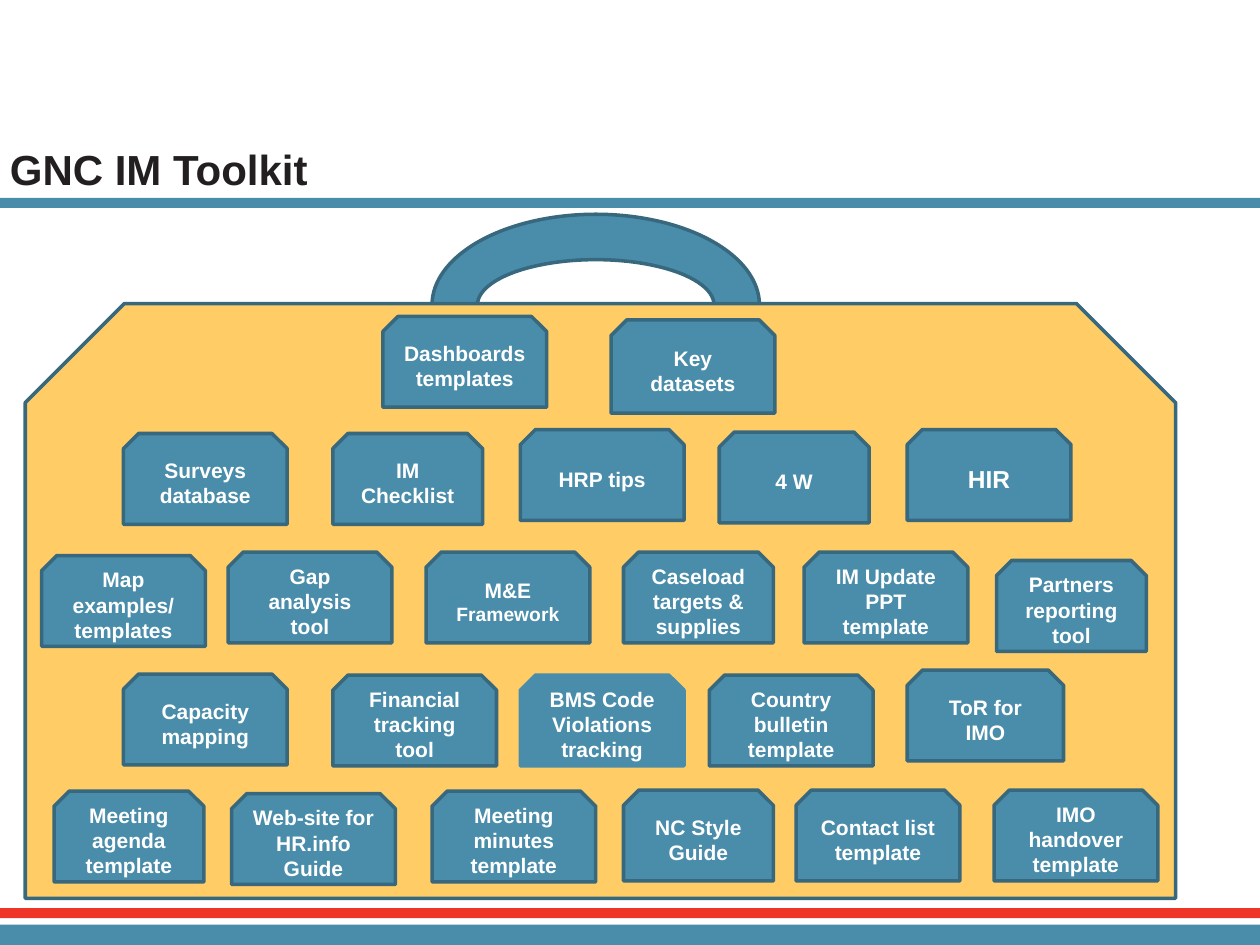
from pptx import Presentation, util as u
from pptx.dml.color import RGBColor
from pptx.enum import shapes, text

THEME = {
    "font": "Arial",
    "blue": "4A8DAA", "edge": "37687E", "red": "EE3528",
    "case": "FFCC66", "ink": "231F20", "white": "FFFFFF",
    "title": 24, "large": 14, "body": 12, "small": 11, "line": 2,
}
SLIDE_WIDTH, SLIDE_HEIGHT = 25.4, 19.05
WIDE, MEDIUM, NARROW = 3.3, 3.15, 3.02
TOOL_HEIGHT = 1.83

TITLE = "GNC IM Toolkit"
BARS = [(3.99, 0.2, "blue"), (18.64, 0.41, "blue"), (18.31, 0.2, "red")]  # top, height, fill
HANDLE = (8.71, 4.32, 6.6, 3.66)
CASE = (0.51, 6.12, 23.19, 11.99)

# Each row of the case: label, left, top, width
ROWS = [
    [("Dashboards templates", 7.72, 6.38, WIDE),
     ("Key datasets", 12.32, 6.45, WIDE)],
    [("Surveys database", 2.49, 8.74, WIDE),
     ("IM Checklist", 6.71, 8.74, NARROW),
     ("HRP tips", 10.49, 8.66, WIDE),
     ("4 W", 14.5, 8.71, NARROW),
     ("HIR", 18.29, 8.66, WIDE)],
    [("Map examples/ templates", 0.84, 11.2, WIDE),
     ("Gap analysis tool", 4.6, 11.13, WIDE),
     ("M&E Framework", 8.59, 11.13, WIDE),
     ("Caseload targets & supplies", 12.57, 11.13, NARROW),
     ("IM Update PPT template", 16.21, 11.13, WIDE),
     ("Partners reporting tool", 20.09, 11.3, NARROW)],
    [("Capacity mapping", 2.49, 13.59, WIDE),
     ("Financial tracking tool", 6.71, 13.61, WIDE),
     ("BMS Code Violations tracking", 10.49, 13.61, WIDE),
     ("Country bulletin template", 14.3, 13.61, WIDE),
     ("ToR for IMO", 18.29, 13.51, MEDIUM)],
    [("Meeting agenda template", 1.09, 15.95, NARROW),
     ("Web-site for HR.info Guide", 4.67, 16.0, WIDE),
     ("Meeting minutes template", 8.71, 15.95, WIDE),
     ("NC Style Guide", 12.57, 15.93, NARROW),
     ("Contact list template", 16.05, 15.93, WIDE),
     ("IMO handover template", 20.04, 15.93, WIDE)],
]
# Departures from the common tool format
HEIGHTS = {"Key datasets": 1.88}
EDGES = {"BMS Code Violations tracking": "blue"}
SPANS = {
    "HIR": [("HIR", "large")],
    "M&E Framework": [("M&E ", "body"), ("Framework", "small")],
}


def color(name):
    return RGBColor.from_string(THEME[name])


def set_all(target, values):
    for name, value in values.items():
        setattr(target, name, value)


def add_shape(page, kind, place, fill, edge=None):
    shape = page.shapes.add_shape(kind, *map(u.Cm, place))
    shape.shadow.inherit = False
    shape.fill.solid()
    shape.fill.fore_color.rgb = color(fill)
    if edge:
        shape.line.color.rgb = color(edge)
        shape.line.width = u.Pt(THEME["line"])
    else:
        shape.line.fill.background()
    return shape


def write(box, spans, ink, align, frame_format):
    """Fill the first paragraph with (text, size name) spans."""
    set_all(box.text_frame, {"word_wrap": True, **frame_format})
    para = box.text_frame.paragraphs[0]
    para.alignment = align
    for words, size in spans:
        span = para.add_run()
        span.text = words
        set_all(span.font, {"name": THEME["font"], "size": u.Pt(THEME[size]), "bold": True})
        span.font.color.rgb = color(ink)


def add_tool(page, label, left, top, width):
    place = (left, top, width, HEIGHTS.get(label, TOOL_HEIGHT))
    tool = add_shape(page, shapes.MSO_SHAPE.SNIP_2_SAME_RECTANGLE, place,
                     "blue", EDGES.get(label, "edge"))
    write(tool, SPANS.get(label, [(label, "body")]), "white", text.PP_ALIGN.CENTER,
          {"vertical_anchor": text.MSO_ANCHOR.MIDDLE})


def main():
    deck = Presentation()
    set_all(deck, {"slide_width": u.Cm(SLIDE_WIDTH), "slide_height": u.Cm(SLIDE_HEIGHT)})
    page = deck.slides.add_slide(deck.slide_layouts[6])

    for top, height, fill in BARS:
        add_shape(page, shapes.MSO_SHAPE.RECTANGLE, (0, top, SLIDE_WIDTH, height), fill)
    add_shape(page, shapes.MSO_SHAPE.DONUT, HANDLE, "blue", "edge")
    add_shape(page, shapes.MSO_SHAPE.SNIP_2_SAME_RECTANGLE, CASE, "case", "edge")

    title = page.shapes.add_textbox(*map(u.Cm, (0, 2.69, 17.2, 1.63)))
    write(title, [(TITLE, "title")], "ink", text.PP_ALIGN.LEFT,
          {"vertical_anchor": text.MSO_ANCHOR.TOP,
           "margin_left": u.Cm(0.2), "margin_top": u.Cm(0.2)})

    for row in ROWS:
        for tool in row:
            add_tool(page, *tool)
    deck.save("out.pptx")


if __name__ == "__main__":
    main()
